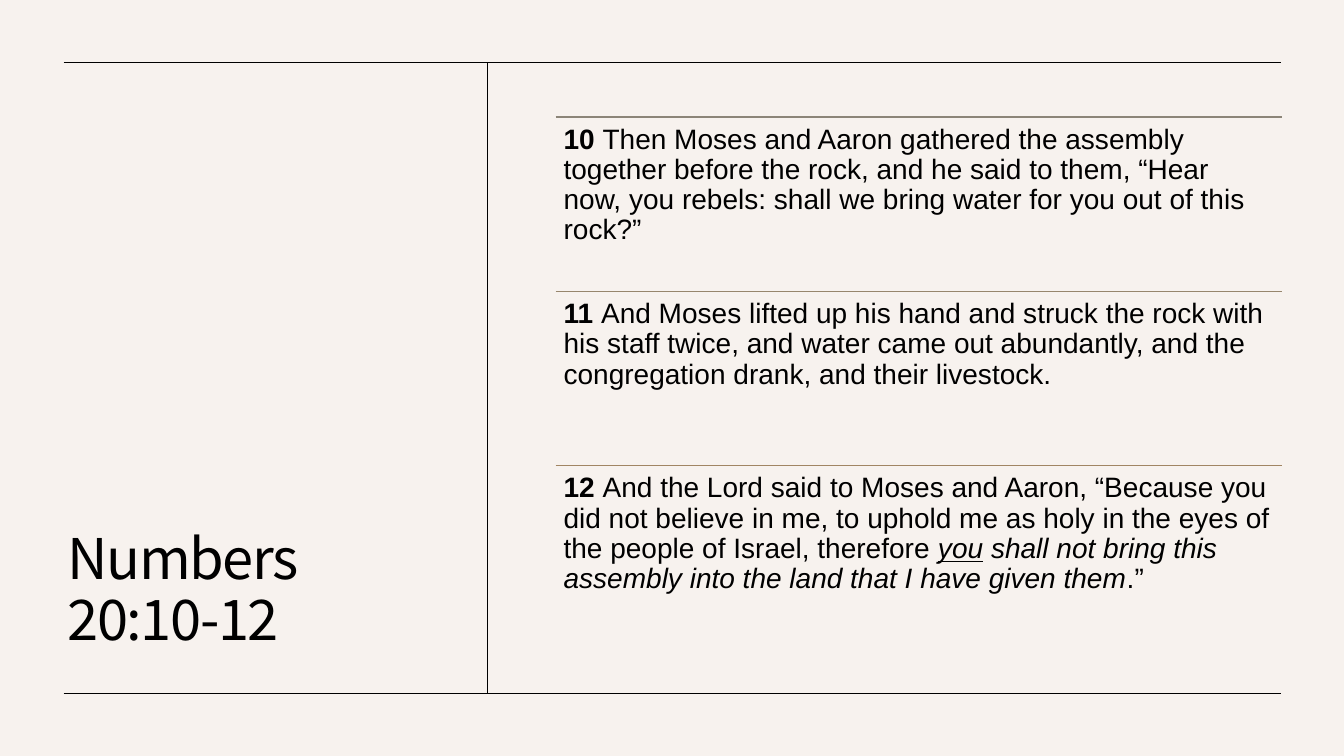
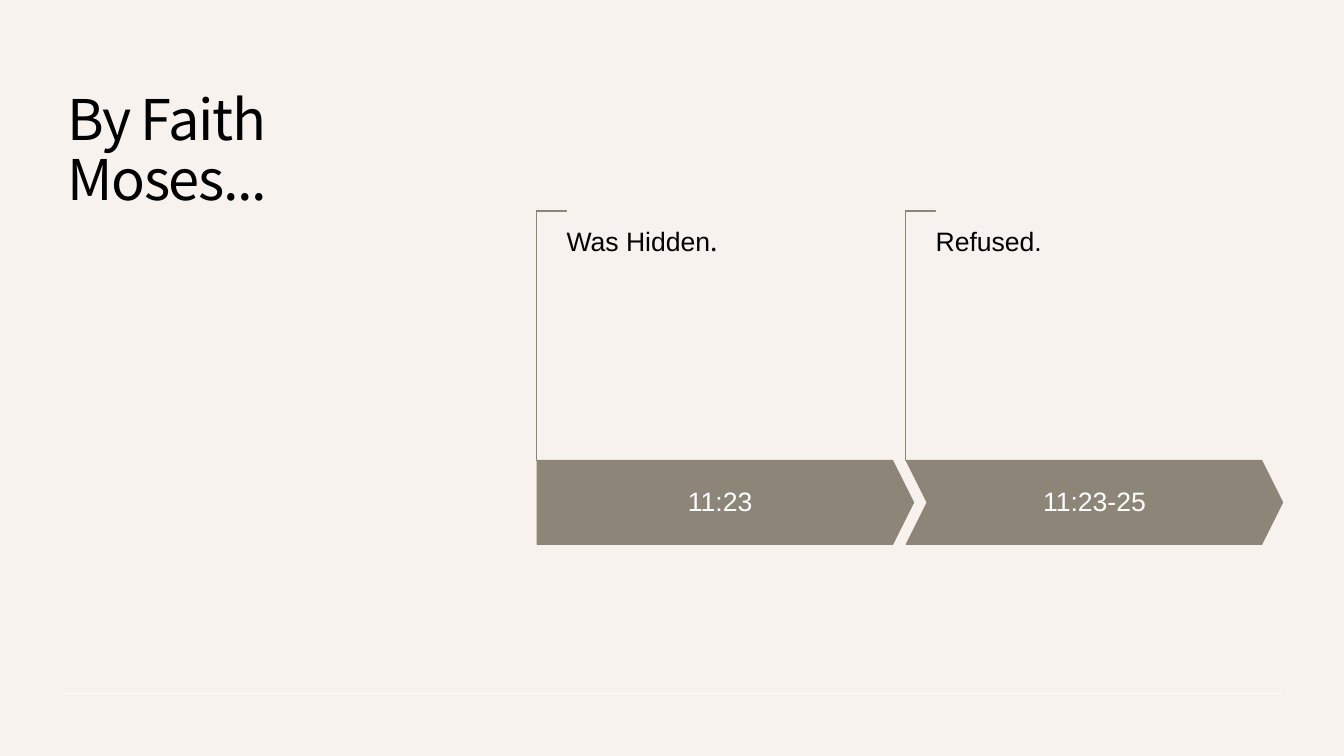
from dataclasses import dataclass

import lxml.etree
import pptx
import pptx.dml.color
import pptx.enum.shapes
import pptx.enum.text
import pptx.oxml.ns
import pptx.shapes.autoshape
import pptx.slide
import pptx.text.text
import pptx.util

Inches = pptx.util.Inches
Pt = pptx.util.Pt
RGBColor = pptx.dml.color.RGBColor
Preset = pptx.enum.shapes.MSO_SHAPE
Align = pptx.enum.text.PP_ALIGN
Anchor = pptx.enum.text.MSO_ANCHOR

CREAM = RGBColor(0xF7, 0xF2, 0xEE)
BLACK = RGBColor(0x00, 0x00, 0x00)
WHITE = RGBColor(0xFF, 0xFF, 0xFF)
TAUPE = RGBColor(0x8C, 0x85, 0x78)
SAND = RGBColor(0x97, 0x86, 0x6D)
TAN = RGBColor(0xA1, 0x85, 0x63)

TITLE_FONT = "Noto Sans CJK KR"
BODY_FONT = "Arial"

RULE_LEFT, RULE_RIGHT = 0.63, 12.71
RULE_TOP, RULE_BOTTOM = 0.62, 6.88
DIVIDER_X = 4.83
VERSE_LEFT, VERSE_TOP, VERSE_WIDTH, VERSE_PITCH = 5.51, 1.16, 7.21, 1.73
STEP_LEFT, STEP_PITCH, STEP_WIDTH = 5.33, 3.66, 3.73
ARROW_TOP, ARROW_HEIGHT = 4.57, 0.83
BRACKET_LENGTH, BRACKET_DEPTH = 2.48, 0.3


@dataclass(frozen=True)
class Phrase:
    text: str
    bold: bool = False
    italic: bool = False
    underline: bool = False
    font: str = BODY_FONT


@dataclass(frozen=True)
class Verse:
    rule_color: RGBColor
    phrases: tuple[Phrase, ...]


@dataclass(frozen=True)
class Step:
    arrow: Preset
    reference: str
    deed: tuple[Phrase, ...]


VERSES = (
    Verse(TAUPE, (
        Phrase("10 ", bold=True),
        Phrase("Then Moses and Aaron gathered the assembly together before the rock, "
               "and he said to them, “Hear now, you rebels: shall we bring water "
               "for you out of this rock?” "),
    )),
    Verse(SAND, (
        Phrase("11 ", bold=True),
        Phrase("And Moses lifted up his hand and struck the rock with his staff twice, "
               "and water came out abundantly, and the congregation drank, "
               "and their livestock. "),
    )),
    Verse(TAN, (
        Phrase("12 ", bold=True),
        Phrase("And the Lord said to Moses and Aaron, “Because you did not believe "
               "in me, to uphold me as holy in the eyes of the people of Israel, "
               "therefore "),
        Phrase("you", italic=True, underline=True),
        Phrase(" shall not bring this assembly into the land that I have given them",
               italic=True),
        Phrase(".”"),
    )),
)

STEPS = (
    Step(Preset.PENTAGON, "11:23",
         (Phrase("Was Hidden"), Phrase(".", font=TITLE_FONT))),
    Step(Preset.CHEVRON, "11:23-25", (Phrase("Refused."),)),
)


def write_text(
    frame: pptx.text.text.TextFrame,
    phrases: tuple[Phrase, ...],
    *,
    size: float,
    color: RGBColor = BLACK,
    align: Align = Align.LEFT,
    anchor: Anchor = Anchor.TOP,
    insets: tuple[float, float] = (0.1, 0.05),
    tracking: int = 0,
) -> None:
    frame.word_wrap = True
    frame.auto_size = pptx.enum.text.MSO_AUTO_SIZE.NONE
    frame.vertical_anchor = anchor
    frame.margin_left = frame.margin_right = Inches(insets[0])
    frame.margin_top = frame.margin_bottom = Inches(insets[1])
    paragraph = frame.paragraphs[0]
    paragraph.alignment = align
    paragraph.line_spacing = 0.9
    for phrase in phrases:
        run = paragraph.add_run()
        run.text = phrase.text
        run.font.name = phrase.font
        run.font.size = Pt(size)
        run.font.color.rgb = color
        run.font.bold = phrase.bold
        run.font.italic = phrase.italic
        run.font.underline = phrase.underline
        if tracking:
            run.font._element.set("spc", str(tracking))


def add_text_box(
    slide: pptx.slide.Slide, left: float, top: float, width: float, height: float
) -> pptx.text.text.TextFrame:
    return slide.shapes.add_textbox(
        Inches(left), Inches(top), Inches(width), Inches(height)
    ).text_frame


def add_rule(
    slide: pptx.slide.Slide,
    start: tuple[float, float],
    end: tuple[float, float],
    color: RGBColor,
    weight: float = 0.5,
) -> None:
    rule = slide.shapes.add_connector(
        pptx.enum.shapes.MSO_CONNECTOR.STRAIGHT,
        *(Inches(value) for value in (*start, *end)),
    )
    rule.line.color.rgb = color
    rule.line.width = Pt(weight)
    lxml.etree.SubElement(rule._element.spPr, pptx.oxml.ns.qn("a:effectLst"))


def add_outlined_shape(
    slide: pptx.slide.Slide,
    preset: Preset,
    left: float,
    top: float,
    width: float,
    height: float,
    fill: RGBColor,
    adjustments: tuple[float, ...],
) -> pptx.shapes.autoshape.Shape:
    shape = slide.shapes.add_shape(
        preset, Inches(left), Inches(top), Inches(width), Inches(height)
    )
    shape.shadow.inherit = False
    shape.fill.solid()
    shape.fill.fore_color.rgb = fill
    shape.line.color.rgb = TAUPE
    shape.line.width = Pt(1)
    for index, value in enumerate(adjustments):
        shape.adjustments[index] = value
    return shape


def add_titled_slide(
    deck, heading: str, top: float, width: float, anchor: Anchor
) -> pptx.slide.Slide:
    slide = deck.slides.add_slide(deck.slide_layouts.get_by_name("Title Only"))
    title = slide.shapes.title
    title.left, title.top = Inches(0.57), Inches(top)
    title.width, title.height = Inches(width), Inches(5.53)
    write_text(title.text_frame, (Phrase(heading, font=TITLE_FONT),),
               size=40, anchor=anchor, tracking=-100)
    return slide


def add_verse(slide: pptx.slide.Slide, verse: Verse, top: float) -> None:
    add_rule(slide, (VERSE_LEFT, top), (VERSE_LEFT + VERSE_WIDTH, top),
             verse.rule_color, weight=1)
    frame = add_text_box(slide, VERSE_LEFT, top, VERSE_WIDTH, VERSE_PITCH)
    write_text(frame, verse.phrases, size=20, insets=(0.08, 0.08))


def add_step(slide: pptx.slide.Slide, step: Step, left: float) -> None:
    bracket = add_outlined_shape(
        slide, Preset.CORNER,
        left + (BRACKET_DEPTH - BRACKET_LENGTH) / 2 - 0.01, 3.18,
        BRACKET_LENGTH, BRACKET_DEPTH, WHITE, (0.01, 0.01),
    )
    bracket.rotation = 90
    arrow = add_outlined_shape(slide, step.arrow, left, ARROW_TOP,
                               STEP_WIDTH, ARROW_HEIGHT, TAUPE, (0.25,))
    write_text(arrow.text_frame, (Phrase(step.reference),), size=19, color=WHITE,
               align=Align.CENTER, anchor=Anchor.MIDDLE, insets=(0.13, 0.26))
    deed = add_text_box(slide, left + 0.29, 2.27, 3.03, 1.95)
    write_text(deed, step.deed, size=19, insets=(0, 0))


def build_scripture_slide(deck) -> None:
    slide = add_titled_slide(deck, "Numbers 20:10-12", 0.99, 3.83, Anchor.BOTTOM)
    for y in (RULE_TOP, RULE_BOTTOM):
        add_rule(slide, (RULE_LEFT, y), (RULE_RIGHT, y), BLACK)
    add_rule(slide, (DIVIDER_X, RULE_TOP), (DIVIDER_X, RULE_BOTTOM), BLACK)
    for index, verse in enumerate(VERSES):
        add_verse(slide, verse, VERSE_TOP + index * VERSE_PITCH)


def build_faith_slide(deck) -> None:
    slide = add_titled_slide(deck, "By Faith Moses...", 0.86, 3.77, Anchor.TOP)
    add_rule(slide, (RULE_LEFT, RULE_BOTTOM), (RULE_RIGHT, RULE_BOTTOM), WHITE)
    for index, step in enumerate(STEPS):
        add_step(slide, step, STEP_LEFT + index * STEP_PITCH)


def main() -> None:
    deck = pptx.Presentation()
    deck.slide_width, deck.slide_height = Inches(13.33), Inches(7.5)
    backdrop = deck.slide_master.background.fill
    backdrop.solid()
    backdrop.fore_color.rgb = CREAM
    build_scripture_slide(deck)
    build_faith_slide(deck)
    deck.save("out.pptx")


if __name__ == "__main__":
    main()
